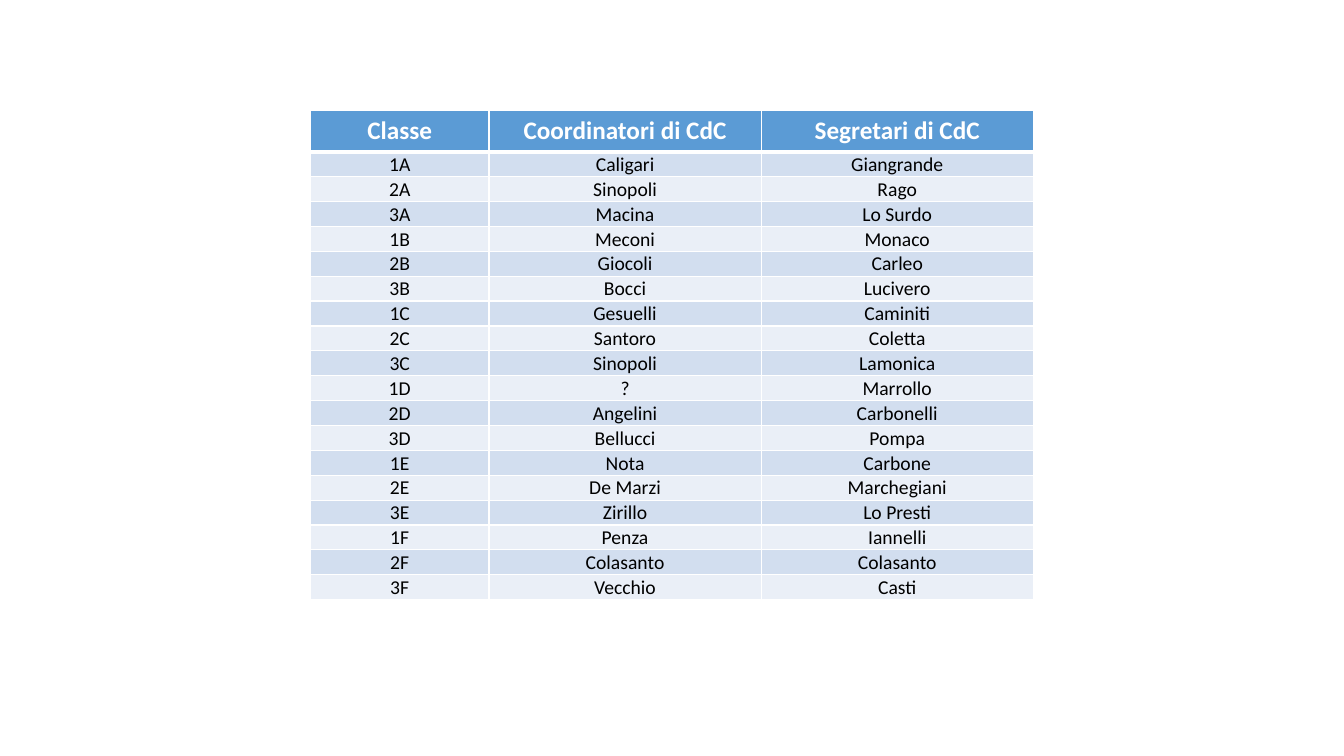
from pptx import Presentation
from pptx.dml.color import RGBColor
from pptx.enum.text import MSO_ANCHOR, PP_ALIGN
from pptx.oxml.ns import qn
from pptx.util import Inches, Pt
from lxml.etree import SubElement

WHITE, BLACK, BLUE = "FFFFFF", "000000", "5B9BD5"
BANDS = ("D2DEEF", "EAEFF7")
HEADER = ("Classe", "Coordinatori di CdC", "Segretari di CdC")
CLASSES = [
    ("1A", "Caligari", "Giangrande"),
    ("2A", "Sinopoli", "Rago"),
    ("3A", "Macina", "Lo Surdo"),
    ("1B", "Meconi", "Monaco"),
    ("2B", "Giocoli", "Carleo"),
    ("3B", "Bocci", "Lucivero"),
    ("1C", "Gesuelli", "Caminiti"),
    ("2C", "Santoro", "Coletta"),
    ("3C", "Sinopoli", "Lamonica"),
    ("1D", "?", "Marrollo"),
    ("2D", "Angelini", "Carbonelli"),
    ("3D", "Bellucci", "Pompa"),
    ("1E", "Nota", "Carbone"),
    ("2E", "De Marzi", "Marchegiani"),
    ("3E", "Zirillo", "Lo Presti"),
    ("1F", "Penza", "Iannelli"),
    ("2F", "Colasanto", "Colasanto"),
    ("3F", "Vecchio", "Casti"),
]
TABLE_BOX = (3.08, 1.1, 7.17, 4.8)
COLUMN_WIDTHS = (1.77, 2.7, 2.7)
HEADER_HEIGHT = 0.4


def color(hex_text):
    return RGBColor.from_string(hex_text)


def add_borders(cell, top=1, bottom=1):
    """Draw white cell borders, with widths in points."""
    properties = cell._tc.get_or_add_tcPr()
    for side, width in (("L", 1), ("R", 1), ("T", top), ("B", bottom)):
        line = SubElement(properties, qn(f"a:ln{side}"), w=str(Pt(width)))
        fill = SubElement(line, qn("a:solidFill"))
        SubElement(fill, qn("a:srgbClr"), val=WHITE)


def style_cell(cell, text, fill, ink, size, bold):
    cell.fill.solid()
    cell.fill.fore_color.rgb = color(fill)
    cell.text = text
    para = cell.text_frame.paragraphs[0]
    para.alignment = PP_ALIGN.CENTER
    para.font.name = "Calibri"
    para.font.size = Pt(size)
    para.font.bold = bold
    para.font.color.rgb = color(ink)


def add_header_cell(cell, text):
    add_borders(cell, bottom=3)
    style_cell(cell, text, BLUE, WHITE, 18, True)


def add_class_cell(cell, text, row):
    add_borders(cell, top=3 if row == 0 else 1)
    style_cell(cell, text, BANDS[row % 2], BLACK, 14, False)
    cell.vertical_anchor = MSO_ANCHOR.MIDDLE
    cell.margin_left = cell.margin_right = cell.margin_top = Inches(0.01)
    cell.margin_bottom = 0


def add_class_table(page, box):
    left, top, width, height = box
    table = page.shapes.add_table(
        len(CLASSES) + 1, len(HEADER),
        Inches(left), Inches(top), Inches(width), Inches(height)).table

    for column, share in zip(table.columns, COLUMN_WIDTHS):
        column.width = Inches(width * share / sum(COLUMN_WIDTHS))
    for row in table.rows:
        row.height = Inches((height - HEADER_HEIGHT) / len(CLASSES))
    table.rows[0].height = Inches(HEADER_HEIGHT)

    for col, title in enumerate(HEADER):
        add_header_cell(table.cell(0, col), title)
    for row, entries in enumerate(CLASSES):
        for col, entry in enumerate(entries):
            add_class_cell(table.cell(row + 1, col), entry, row)


def main():
    deck = Presentation()
    deck.slide_width, deck.slide_height = Inches(13.33), Inches(7.5)
    page = deck.slides.add_slide(deck.slide_layouts[6])
    add_class_table(page, TABLE_BOX)
    deck.save("out.pptx")


if __name__ == "__main__":
    main()
